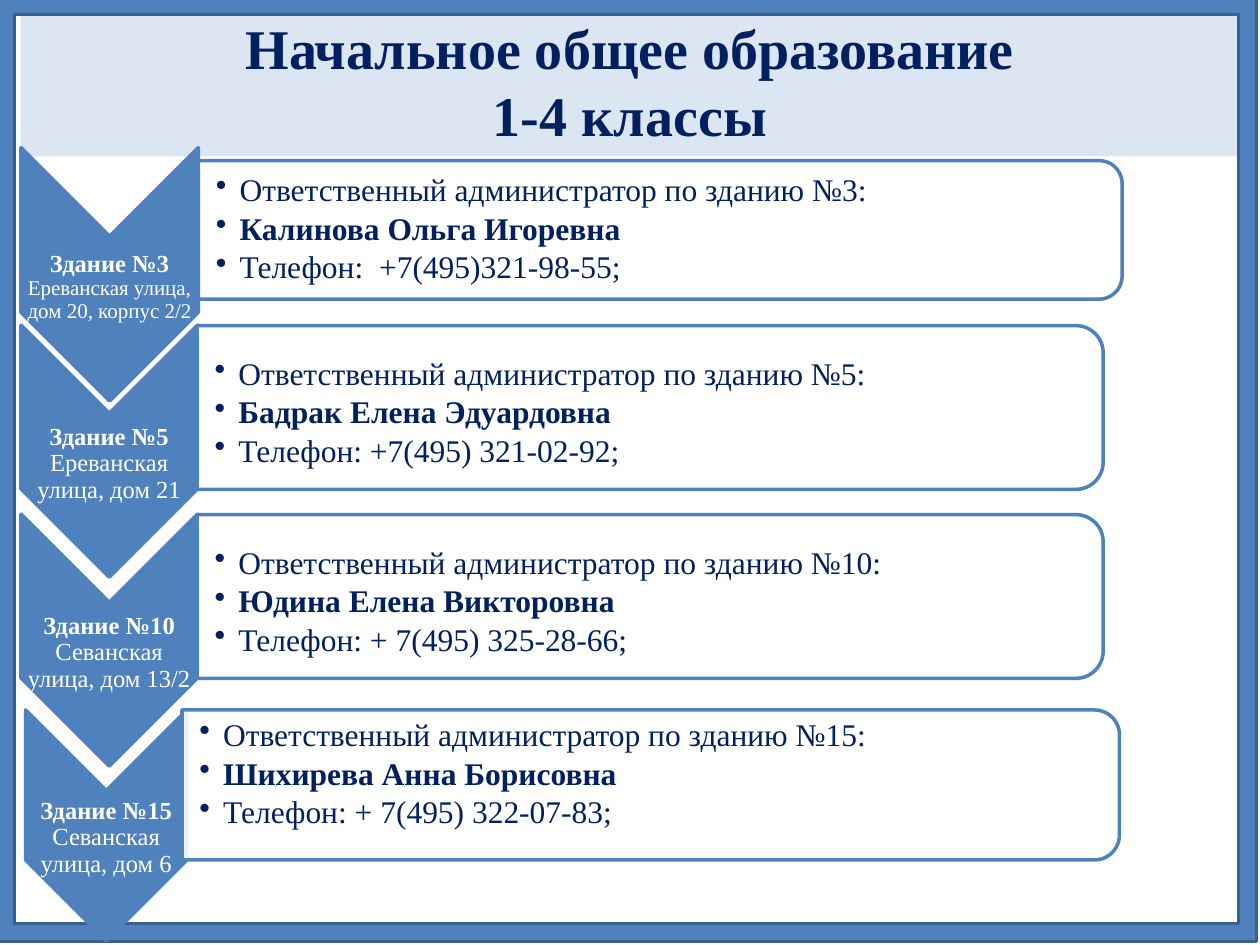
from lxml import etree
from pptx import Presentation
from pptx.dml.color import RGBColor
from pptx.enum.shapes import MSO_SHAPE
from pptx.enum.text import MSO_ANCHOR, PP_ALIGN
from pptx.oxml.ns import qn
from pptx.util import Pt

RECTANGLE = MSO_SHAPE.RECTANGLE
FRAME = MSO_SHAPE.FRAME
CHEVRON = MSO_SHAPE.CHEVRON
CARD = MSO_SHAPE.ROUND_2_SAME_RECTANGLE
CENTER = PP_ALIGN.CENTER
LEFT = PP_ALIGN.LEFT
TOP = MSO_ANCHOR.TOP
MIDDLE = MSO_ANCHOR.MIDDLE

COLORS = {
    "navy": "002060",
    "blue": "4F81BD",
    "dark_blue": "3A5F8C",
    "pale_blue": "DCE6F2",
    "white": "FFFFFF",
}
FONT = "Times New Roman"
BULLET_INDENT = 13.5
LABEL_SHIFT = 6.3

BUILDINGS = [
    {"number": 3, "address": "Ереванская улица, дом 20, корпус 2/2", "address_size": 12,
     "head": "Калинова Ольга Игоревна", "phone": "\u00a0 +7(495)321-98-55;",
     "chevron": (12, 84.4, 101.3, 144.7), "card": (113.4, 91.8, 527.8, 79.2), "shift": 0},
    {"number": 5, "address": "Ереванская улица, дом 21", "address_size": 14,
     "head": "Бадрак Елена Эдуардовна", "phone": "\u00a0+7(495) 321-02-92;",
     "chevron": (12, 185.8, 100.8, 144), "card": (112.7, 186.1, 517.7, 93.6), "shift": 3.5},
    {"number": 10, "address": "Севанская улица, дом 13/2", "address_size": 14,
     "head": "Юдина Елена Викторовна", "phone": "\u00a0+ 7(495) 325-28-66;",
     "chevron": (12, 293.8, 100.8, 144), "card": (112.7, 294.1, 517.7, 93.6), "shift": 3.5},
    {"number": 15, "address": "Севанская улица, дом 6", "address_size": 14,
     "head": "Шихирева Анна Борисовна", "phone": "\u00a0+ 7(495) 322-07-83;",
     "chevron": (14.6, 405.7, 92.2, 131.8), "card": (104, 405.7, 535.7, 85.7), "shift": -5.7},
]


def rgb(color):
    return RGBColor.from_string(COLORS[color])


def add_panel(slide, kind, box, fill, line=None, opacity=None, turned=False):
    left, top, width, height = box
    if turned:
        left, top = left + (width - height) / 2, top + (height - width) / 2
        width, height = height, width
    panel = slide.shapes.add_shape(kind, Pt(left), Pt(top), Pt(width), Pt(height))
    panel.rotation = 90 if turned else 0
    panel.shadow.inherit = False
    panel.fill.solid()
    panel.fill.fore_color.rgb = rgb(fill)
    if opacity:
        color = panel.fill._xPr.find(qn("a:solidFill"))[0]
        etree.SubElement(color, qn("a:alpha")).set("val", str(opacity * 1000))
    if line:
        panel.line.color.rgb = rgb(line)
        panel.line.width = Pt(2)
    else:
        panel.line.fill.background()
    return panel


def setup_frame(frame, margins, anchor):
    frame.word_wrap = True
    frame.vertical_anchor = anchor
    frame.margin_left, frame.margin_top, frame.margin_right, frame.margin_bottom = map(Pt, margins)
    return frame


def add_text_area(slide, box, margins):
    area = slide.shapes.add_textbox(*map(Pt, box))
    return setup_frame(area.text_frame, margins, MIDDLE)


def write(frame, text, size=18, color="navy", bold=False, align=LEFT,
          spacing=None, after=0, bullet=False):
    first = frame.paragraphs[0]
    paragraph = frame.add_paragraph() if first.runs else first
    paragraph.alignment = align
    paragraph.space_after = Pt(after)
    if spacing:
        paragraph.line_spacing = spacing
    if bullet:
        props = paragraph._p.get_or_add_pPr()
        props.set("marL", str(Pt(BULLET_INDENT)))
        props.set("indent", str(Pt(-BULLET_INDENT)))
        etree.SubElement(props, qn("a:buChar")).set("char", "•")
    run = paragraph.add_run()
    run.text = text
    run.font.name = FONT
    run.font.size = Pt(size)
    run.font.bold = bold
    run.font.color.rgb = rgb(color)


def add_title(slide):
    banner = add_panel(slide, RECTANGLE, (12, 4.3, 696, 85), "pale_blue")
    frame = setup_frame(banner.text_frame, (7.2, 3.6, 7.2, 3.6), TOP)
    for line in ("Начальное общее образование", "1-4 классы"):
        write(frame, line, size=32, bold=True, align=CENTER)


def add_border(slide):
    border = add_panel(slide, FRAME, (-2, -2, 720, 540), "blue", line="dark_blue")
    border.adjustments[0] = 0.019


def add_building(slide, building):
    number = building["number"]
    left, top, width, height = building["chevron"]
    add_panel(slide, CHEVRON, building["chevron"], "blue", line="blue", turned=True)
    label_height = height - width
    label_top = top + width / 2 + LABEL_SHIFT
    label = add_text_area(slide, (left, label_top, width, label_height), (0.7,) * 4)
    write(label, f"Здание №{number}", size=14, color="white", bold=True, align=CENTER)
    write(label, building["address"], size=building["address_size"], color="white",
          align=CENTER, spacing=0.9)

    add_panel(slide, CARD, building["card"], "white", line="blue", opacity=90, turned=True)
    left, top, width, height = building["card"]
    contact = add_text_area(slide, (left, top + building["shift"], width, height),
                            (10, 0.7, 0.7, 0.7))
    contact_lines = (
        (f"Ответственный администратор по зданию №{number}:", False),
        (building["head"], True),
        (f"Телефон:{building['phone']}", False),
    )
    for text, bold in contact_lines:
        write(contact, text, bold=bold, spacing=0.9, after=2.7, bullet=True)


def main():
    deck = Presentation()
    deck.slide_width, deck.slide_height = Pt(720), Pt(540)
    slide = deck.slides.add_slide(deck.slide_layouts[6])
    add_title(slide)
    add_border(slide)
    for building in BUILDINGS:
        add_building(slide, building)
    deck.save("out.pptx")


if __name__ == "__main__":
    main()
